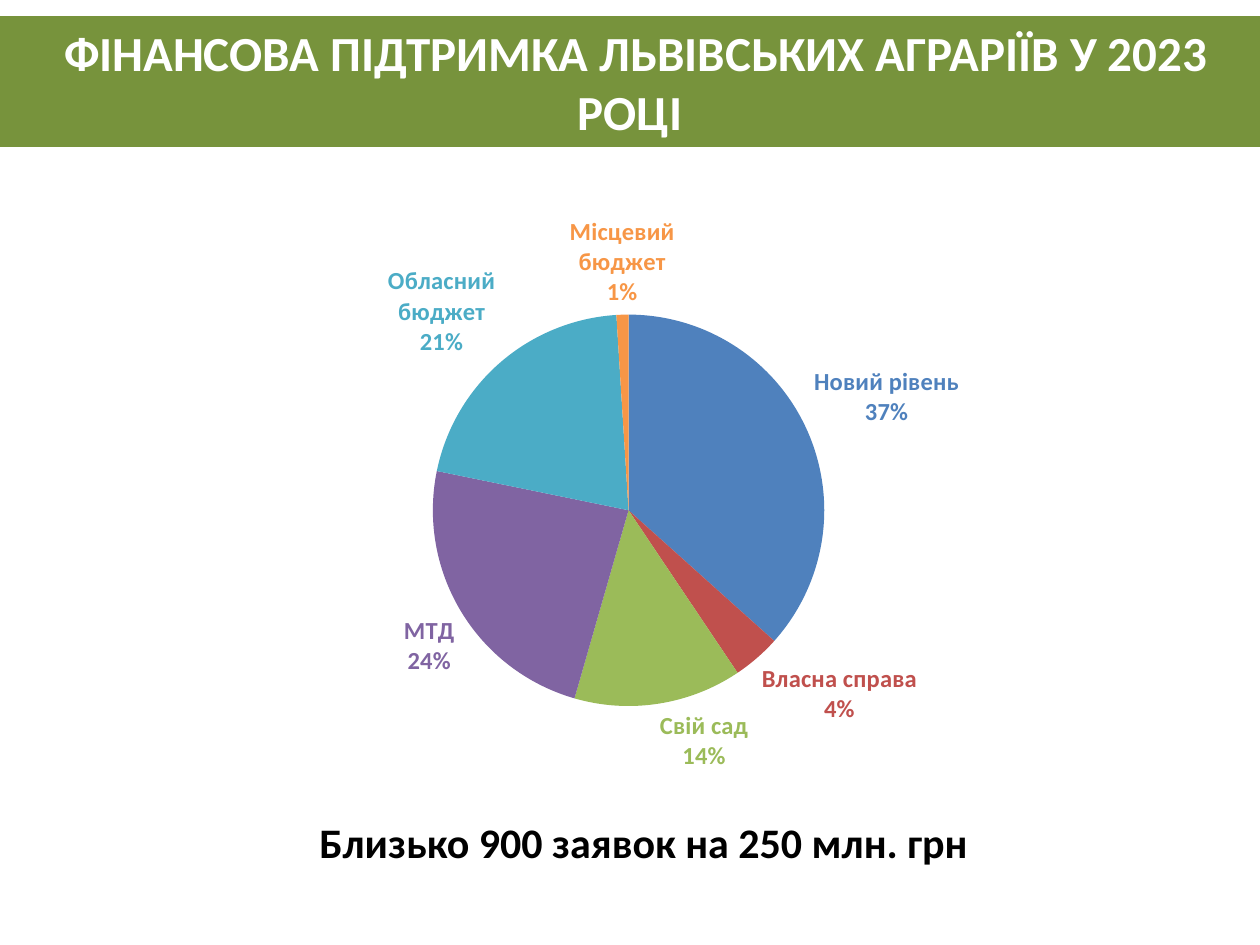
from lxml.etree import QName, SubElement
from pptx import Presentation
from pptx.chart.data import CategoryChartData
from pptx.dml.color import RGBColor
from pptx.enum.chart import XL_CHART_TYPE, XL_LABEL_POSITION
from pptx.enum.text import MSO_ANCHOR, MSO_AUTO_SIZE, PP_ALIGN
from pptx.oxml import parse_xml
from pptx.oxml.ns import nsdecls, qn
from pptx.util import Emu, Pt

SUPPORT = [
    ("Новий рівень", 37, "4F81BD"),
    ("Власна справа", 4, "C0504D"),
    ("Свій сад", 14, "9BBB59"),
    ("МТД", 24, "8064A2"),
    ("Обласний бюджет", 21, "4BACC6"),
    ("Місцевий бюджет", 1, "F79646"),
]
PLOT_AREA = {"x": 0.118, "y": 0.186, "w": 0.814, "h": 0.658}


def px(n):
    return Emu(round(n * 914400 / 126))


def rgb(value):
    return RGBColor.from_string(value)


class Deck:
    font = "Calibri"
    white = "FFFFFF"
    black = "000000"
    green = "77933C"

    def __init__(self, width, height):
        self.prs = Presentation()
        self.prs.slide_width, self.prs.slide_height = px(width), px(height)
        self.s = self.prs.slides.add_slide(self.prs.slide_layouts[5])

    def style(self, font, size, color, bold=True):
        font.name, font.size, font.bold = self.font, Pt(size), bold
        font.color.rgb = rgb(color)

    def title(self, text, x, y, w, h):
        sp = self.s.shapes.title
        sp.left, sp.top, sp.width, sp.height = px(x), px(y), px(w), px(h)
        sp.fill.solid()
        sp.fill.fore_color.rgb = rgb(self.green)
        tf = sp.text_frame
        tf.text = text
        tf.word_wrap = True
        tf.auto_size = MSO_AUTO_SIZE.NONE
        tf.vertical_anchor = MSO_ANCHOR.MIDDLE
        p = tf.paragraphs[0]
        p.alignment = PP_ALIGN.CENTER
        self.style(p.runs[0].font, 28, self.white)

    def text(self, text, x, y, w, h):
        tf = self.s.shapes.add_textbox(px(x), px(y), px(w), px(h)).text_frame
        tf.text = text
        tf.word_wrap = False
        self.style(tf.paragraphs[0].runs[0].font, 24, self.black)

    def pie(self, rows, x, y, w, h):
        names, values, colors = zip(*rows)
        data = CategoryChartData()
        data.categories = names
        data.add_series("Series 1", values)
        chart = self.s.shapes.add_chart(
            XL_CHART_TYPE.PIE, px(x), px(y), px(w), px(h), data).chart
        chart.has_title = chart.has_legend = False
        self.style(chart.font, 10, self.black, False)
        plot = chart.plots[0]
        plot.vary_by_categories = True
        series = plot.series[0]
        labels = series.data_labels
        labels.position = XL_LABEL_POSITION.OUTSIDE_END
        self.style(labels.font, 14, colors[0])
        for i, color in enumerate(colors):
            point = series.points[i]
            point.format.fill.solid()
            point.format.fill.fore_color.rgb = rgb(color)
            point.data_label.position = XL_LABEL_POSITION.OUTSIDE_END
            self.style(point.data_label.font, 14, color)
        self.show_name_and_percent(chart.element)
        self.place_plot(chart.element)

    def show_name_and_percent(self, root):
        shown = {"showCatName": "1", "showPercent": "1", "showVal": "0"}
        for el in list(root.iter(qn("c:dLbl"), qn("c:dLbls"))):
            for child in list(el):
                name = QName(child).localname
                if name in shown:
                    child.set("val", shown[name])
                elif name == "showBubbleSize":
                    child.addnext(parse_xml(
                        f"<c:separator {nsdecls('c')}>\n</c:separator>"))

    def place_plot(self, root):
        area = next(root.iter(qn("c:plotArea")))
        for old in area.findall(qn("c:layout")):
            area.remove(old)
        layout = parse_xml(f"<c:layout {nsdecls('c')}/>")
        area.insert(0, layout)
        manual = SubElement(layout, qn("c:manualLayout"))
        settings = {"layoutTarget": "inner", "xMode": "edge", "yMode": "edge"}
        for tag, val in {**settings, **PLOT_AREA}.items():
            SubElement(manual, qn(f"c:{tag}")).set("val", str(val))


def main():
    deck = Deck(1260, 945)
    deck.title(" ФІНАНСОВА ПІДТРИМКА ЛЬВІВСЬКИХ АГРАРІЇВ У 2023 РОЦІ",
               0, 16, 1260, 131)
    deck.pie(SUPPORT, 123, 204, 963, 595)
    deck.text("Близько 900 заявок на 250 млн. грн", 307, 810, 680, 63)
    deck.prs.save("out.pptx")


if __name__ == "__main__":
    main()
